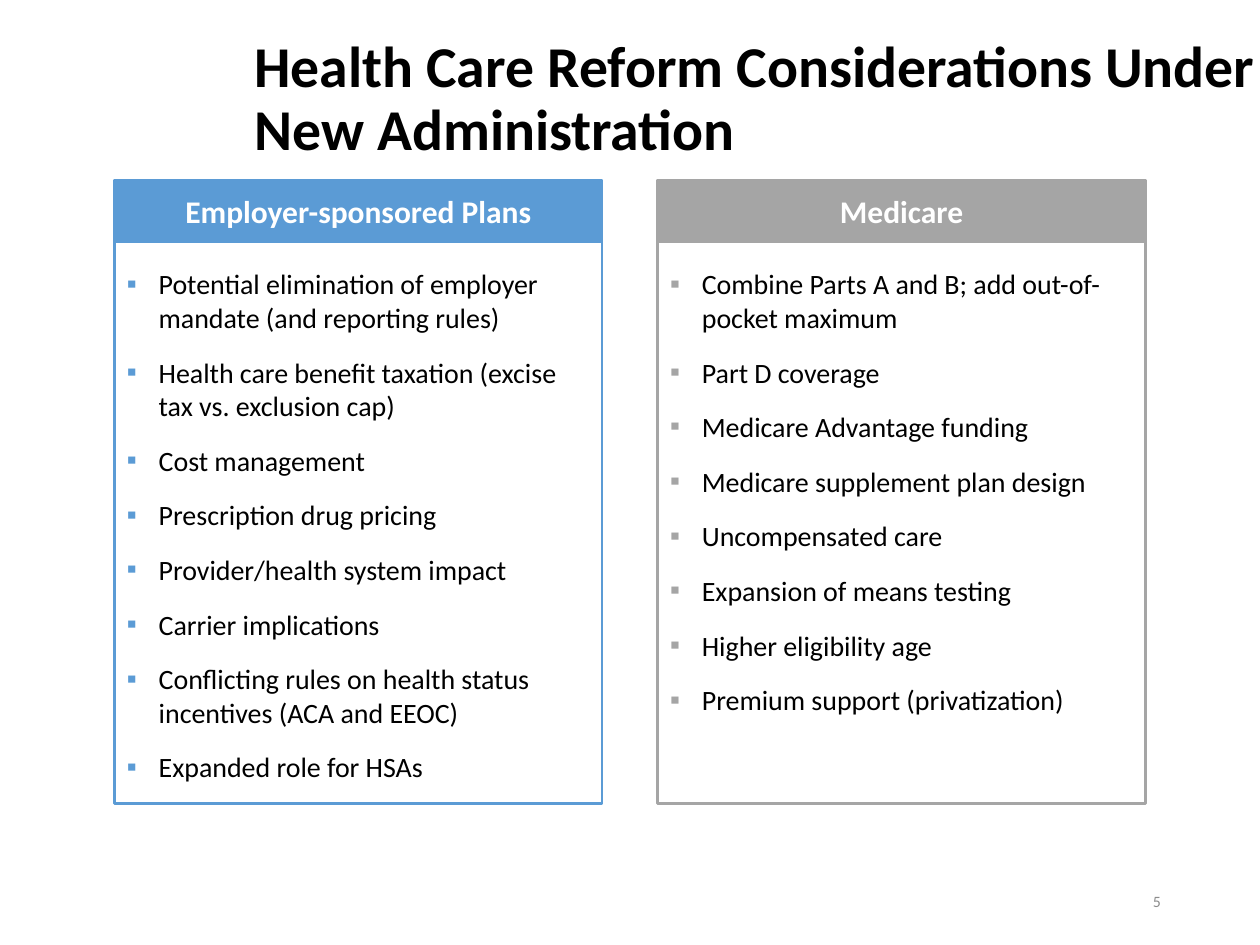
from lxml.etree import SubElement as add_node
from pptx import Presentation
from pptx.dml.color import RGBColor
from pptx.enum.shapes import MSO_SHAPE as Preset
from pptx.enum.text import MSO_ANCHOR as Anchor, PP_ALIGN as Align
from pptx.oxml.ns import qn
from pptx.util import Cm, Pt

BLUE, GRAY = "5B9BD5", "A5A5A5"
BLACK, WHITE, PALE = "000000", "FFFFFF", "8C8C8C"

EMPLOYER_POINTS = [
    "Potential elimination of employer mandate (and reporting rules)",
    "Health care benefit taxation (excise tax vs. exclusion cap)",
    "Cost management",
    "Prescription drug pricing",
    "Provider/health system impact",
    "Carrier implications",
    "Conflicting rules on health status incentives (ACA and EEOC)",
    "Expanded role for HSAs",
]
MEDICARE_POINTS = [
    "Combine Parts A and B; add out-of-pocket maximum",
    "Part D coverage",
    "Medicare Advantage funding",
    "Medicare supplement plan design",
    "Uncompensated care",
    "Expansion of means testing",
    "Higher eligibility age",
    "Premium support (privatization)",
]


def colour(code):
    return RGBColor.from_string(code)


class SlideBuilder:
    font_name = "Calibri"
    panel_top, panel_width = 3.63, 9.83
    header_height, body_height = 1.24, 11.33

    def __init__(self, page):
        self.page = page

    def style(self, para, size, code, bold=False):
        font = para.font
        font.name, font.size, font.bold = self.font_name, Pt(size), bold
        font.color.rgb = colour(code)

    def text(self, place, words, size, code, bold=False, align=Align.LEFT, spacing=1.0):
        box = self.page.shapes.add_textbox(*map(Cm, place))
        frame = box.text_frame
        frame.word_wrap = True
        frame.vertical_anchor = Anchor.MIDDLE
        para = frame.paragraphs[0]
        para.text = words
        para.alignment = align
        para.line_spacing = spacing
        self.style(para, size, code, bold)

    def rectangle(self, place, fill, line):
        box = self.page.shapes.add_shape(Preset.RECTANGLE, *map(Cm, place))
        box.shadow.inherit = False
        box.fill.solid()
        box.fill.fore_color.rgb = colour(fill)
        box.line.color.rgb = colour(line)
        box.line.width = Pt(1.5)
        box.text_frame.word_wrap = True
        return box.text_frame

    def bullet(self, para, words, accent):
        para.text = words
        para.alignment = Align.LEFT
        props = para._p.get_or_add_pPr()
        props.set("marL", str(Cm(0.64)))
        props.set("indent", str(-Cm(0.64)))
        bullet_colour = add_node(props, qn("a:buClr"))
        add_node(bullet_colour, qn("a:srgbClr"), val=accent)
        add_node(props, qn("a:buFont"), typeface=self.font_name)
        add_node(props, qn("a:buChar"), char="▪")
        para.space_after = Pt(6)
        self.style(para, 16, BLACK)

    def panel(self, left, accent, heading, points):
        top, width = self.panel_top, self.panel_width
        header = self.rectangle((left, top, width, self.header_height), accent, accent)
        header.vertical_anchor = Anchor.MIDDLE
        para = header.paragraphs[0]
        para.text = heading
        para.alignment = Align.CENTER
        self.style(para, 18, WHITE, True)

        body_top = top + self.header_height
        body = self.rectangle((left, body_top, width, self.body_height), WHITE, accent)
        body.vertical_anchor = Anchor.TOP
        body.margin_left = body.margin_right = body.margin_bottom = Cm(0.25)
        body.margin_top = Cm(0.51)
        for index, words in enumerate(points):
            para = body.add_paragraph() if index else body.paragraphs[0]
            self.bullet(para, words, accent)
            if index:
                para.space_before = Pt(6)


def main():
    deck = Presentation()
    deck.slide_width, deck.slide_height = Cm(25.4), Cm(19.05)
    slide = SlideBuilder(deck.slides.add_slide(deck.slide_layouts[6]))
    slide.text((4.88, 0.18, 21.89, 3.68),
               "Health Care Reform Considerations Under New Administration",
               33, BLACK, bold=True, spacing=0.9)
    slide.text((17.93, 17.65, 5.72, 1.02), "5", 9, PALE, align=Align.RIGHT)
    slide.panel(2.31, BLUE, "Employer-sponsored Plans", EMPLOYER_POINTS)
    slide.panel(13.26, GRAY, "Medicare", MEDICARE_POINTS)
    deck.save("out.pptx")


if __name__ == "__main__":
    main()
